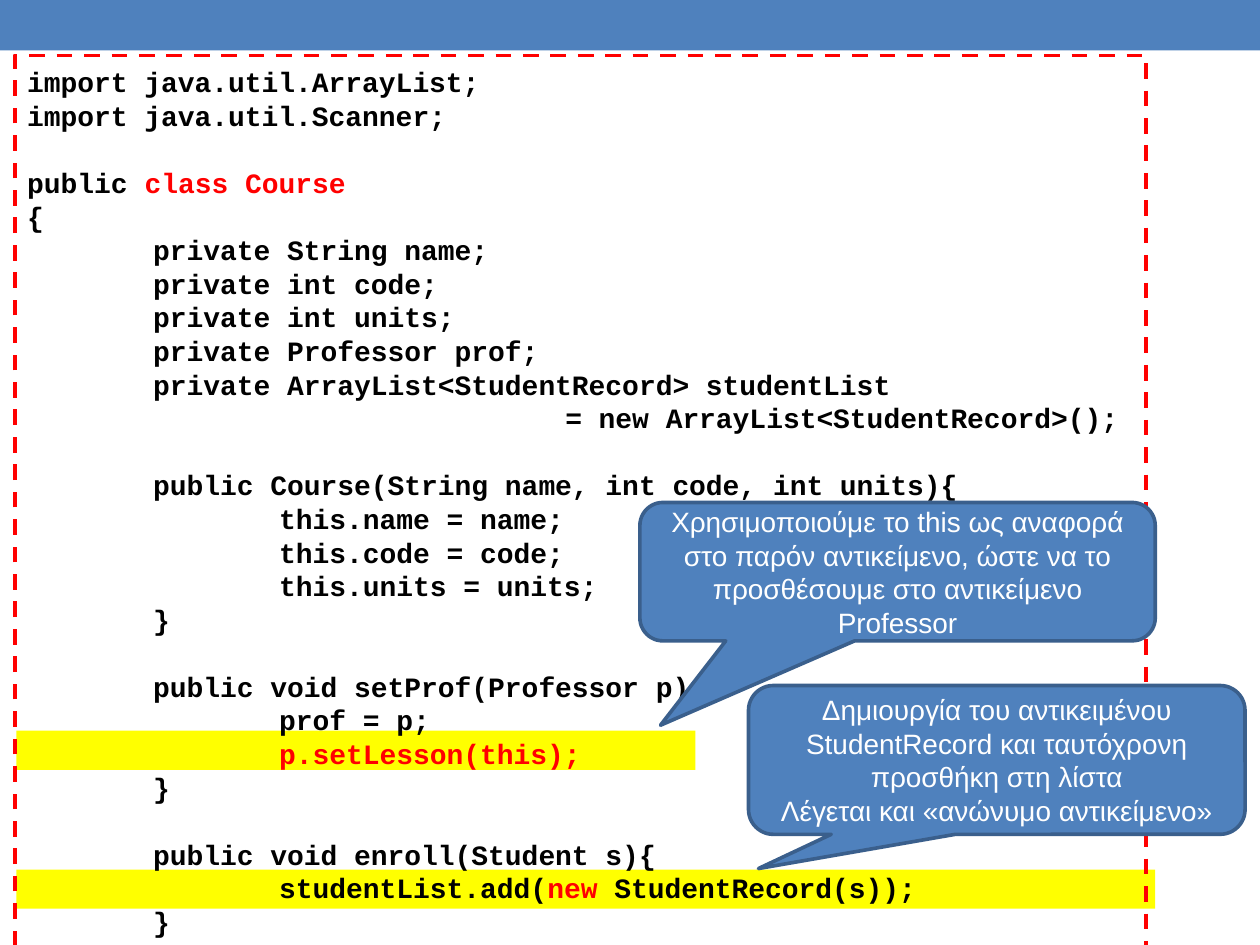
from dataclasses import dataclass

from pptx import Presentation
from pptx.dml.color import RGBColor
from pptx.enum.dml import MSO_LINE
from pptx.enum.shapes import MSO_SHAPE as Shape
from pptx.enum.text import MSO_ANCHOR, PP_ALIGN
from pptx.util import Cm, Pt


@dataclass(frozen=True)
class Theme:
    blue: RGBColor = RGBColor(0x4F, 0x81, 0xBD)
    outline: RGBColor = RGBColor(0x3A, 0x5F, 0x8C)
    red: RGBColor = RGBColor(0xFF, 0, 0)
    yellow: RGBColor = RGBColor(0xFF, 0xFF, 0)
    black: RGBColor = RGBColor(0, 0, 0)
    white: RGBColor = RGBColor(0xFF, 0xFF, 0xFF)
    code_font: str = "Courier New"
    note_font: str = "Arial"
    size: Pt = Pt(16)
    leading: Pt = Pt(19.2)


THEME = Theme()
TAB = 2.54  # cm per code level
CONTINUATION = 4.27  # levels before the wrapped assignment

# Each block is set off by one line of space; a line is (level, text),
# and the parts of the text between bars are red.
CODE_BLOCKS = [
    [(0, "import java.util.ArrayList;"),
     (0, "import java.util.Scanner;")],
    [(0, "public |class Course|"),
     (0, "{"),
     (1, "private String name;"),
     (1, "private int code;"),
     (1, "private int units;"),
     (1, "private Professor prof;"),
     (1, "private ArrayList<StudentRecord> studentList"),
     (CONTINUATION, "= new ArrayList<StudentRecord>();")],
    [(1, "public Course(String name, int code, int units){"),
     (2, "this.name = name;"),
     (2, "this.code = code;"),
     (2, "this.units = units;"),
     (1, "}")],
    [(1, "public void setProf(Professor p){"),
     (2, "prof = p;"),
     (2, "|p.setLesson(this);|"),
     (1, "}")],
    [(1, "public void enroll(Student s){"),
     (2, "studentList.add(|new |StudentRecord(s));"),
     (1, "}")],
]


def style_run(r, font, color, bold=False):
    r.font.name = font
    r.font.size = THEME.size
    r.font.bold = bold
    r.font.color.rgb = color


def add_bar(s, left, top, width, height, color):
    sp = s.shapes.add_shape(Shape.RECTANGLE, Cm(left), Cm(top), Cm(width), Cm(height))
    sp.shadow.inherit = False
    sp.fill.solid()
    sp.fill.fore_color.rgb = color
    sp.line.fill.background()


def add_code_line(p, level, text):
    p.line_spacing = THEME.leading
    p._p.get_or_add_pPr().set("marL", str(Cm(level * TAB)))
    for i, part in enumerate(text.split("|")):
        if part:
            r = p.add_run()
            r.text = part
            style_run(r, THEME.code_font, THEME.red if i % 2 else THEME.black, True)


def add_code(s, left, top, width, height):
    sp = s.shapes.add_textbox(Cm(left), Cm(top), Cm(width), Cm(height))
    sp.line.color.rgb = THEME.red
    sp.line.width = Pt(2.25)
    sp.line.dash_style = MSO_LINE.DASH
    tf = sp.text_frame
    tf.word_wrap = True
    tf.margin_top = Cm(0.19)
    p = tf.paragraphs[0]
    for b, block in enumerate(CODE_BLOCKS):
        for n, (level, text) in enumerate(block):
            if b or n:
                p = tf.add_paragraph()
            if b and not n:
                p.space_before = THEME.leading
            add_code_line(p, level, text)


def add_callout(s, left, top, width, height, tip, text):
    """Add a speech bubble; tip is its point as shares of the size from the centre."""
    sp = s.shapes.add_shape(Shape.ROUNDED_RECTANGULAR_CALLOUT,
                            Cm(left), Cm(top), Cm(width), Cm(height))
    sp.shadow.inherit = False
    sp.adjustments[0], sp.adjustments[1] = tip
    sp.fill.solid()
    sp.fill.fore_color.rgb = THEME.blue
    sp.line.color.rgb = THEME.outline
    sp.line.width = Pt(2.08)
    tf = sp.text_frame
    tf.word_wrap = True
    tf.vertical_anchor = MSO_ANCHOR.MIDDLE
    tf.text = text
    for p in tf.paragraphs:
        p.alignment = PP_ALIGN.CENTER
        p.line_spacing = THEME.leading
        for r in p.runs:
            style_run(r, THEME.note_font, THEME.white)


def main():
    prs = Presentation()
    prs.slide_width, prs.slide_height = Cm(25.4), Cm(19.05)
    s = prs.slides.add_slide(prs.slide_layouts[6])

    add_bar(s, 0, 0, 25.4, 1.02, THEME.blue)
    for top, width in ((17.53, 22.96), (14.73, 13.69)):
        add_bar(s, 0.33, top, width, 0.79, THEME.yellow)
    add_code(s, 0.3, 1.12, 22.81, 18.72)
    add_callout(s, 12.9, 10.13, 10.39, 2.79, (-0.46, 1.11),
                "Χρησιμοποιούμε το this ως αναφορά στο παρόν αντικείμενο, "
                "ώστε να το προσθέσουμε στο αντικείμενο Professor")
    add_callout(s, 15.09, 13.82, 10.01, 3, (-0.48, 0.73),
                "Δημιουργία του αντικειμένου StudentRecord και ταυτόχρονη "
                "προσθήκη στη λίστα\nΛέγεται και «ανώνυμο αντικείμενο»")
    prs.save("out.pptx")


if __name__ == "__main__":
    main()
